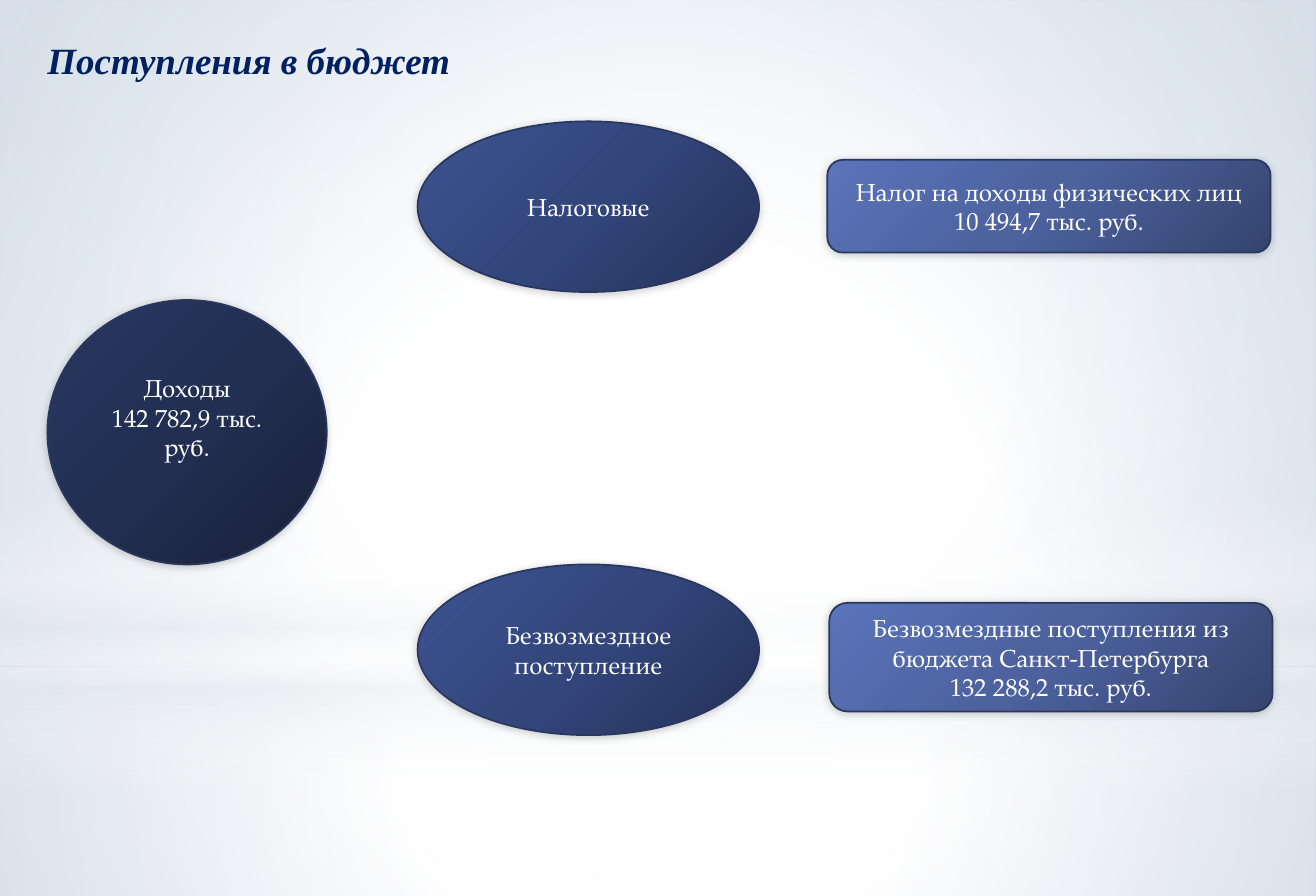
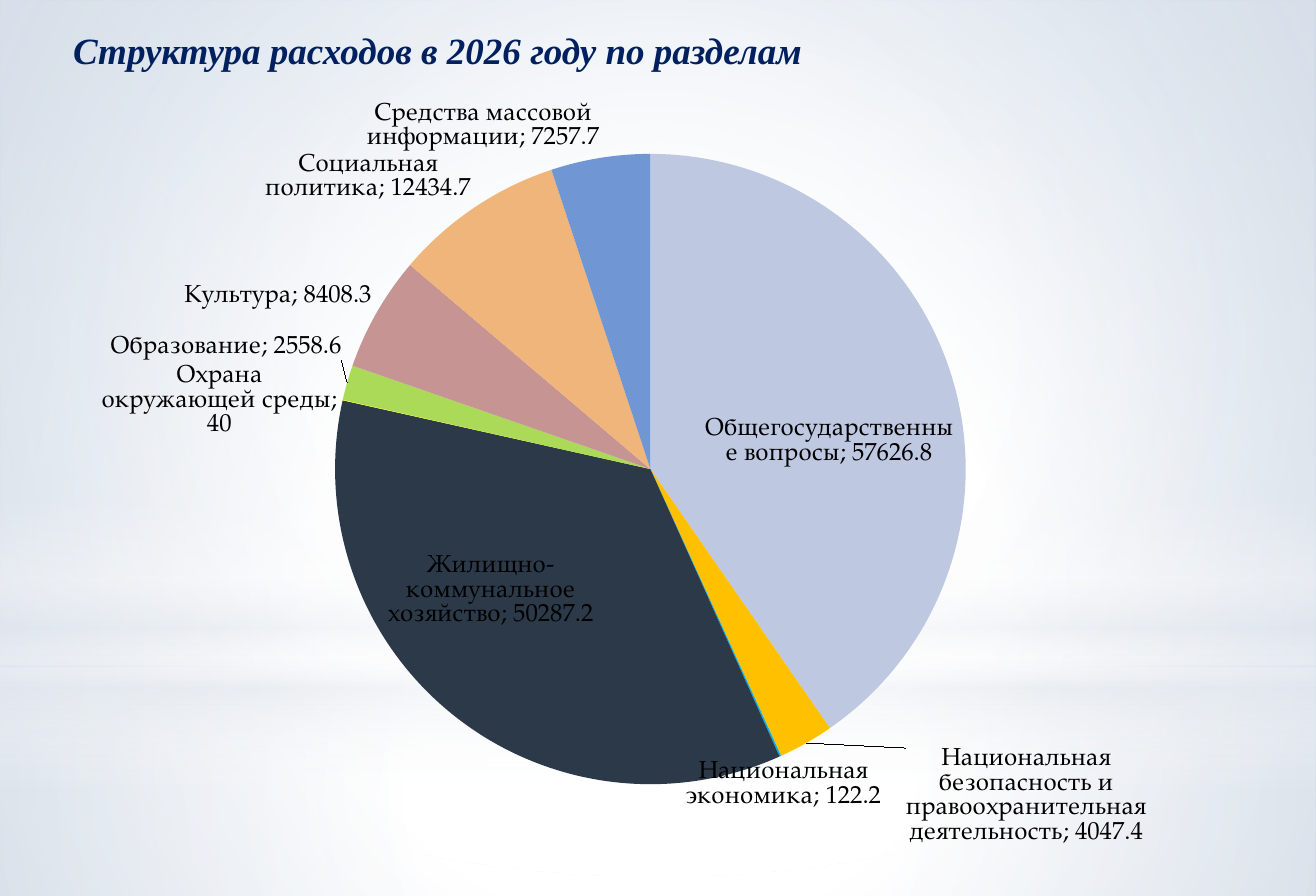
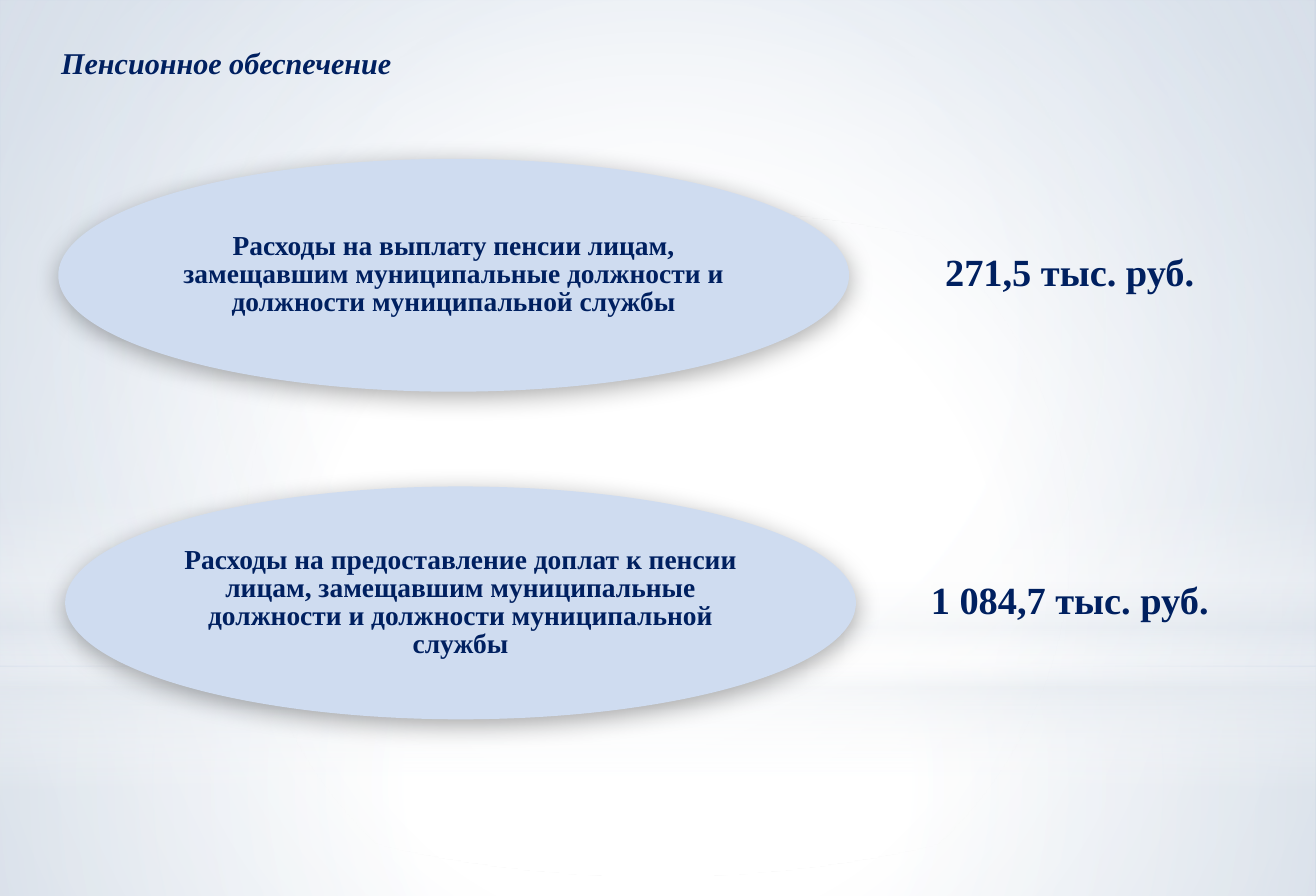
from pptx import Presentation
from pptx.chart.data import CategoryChartData
from pptx.dml.color import RGBColor
from pptx.enum.chart import XL_CHART_TYPE, XL_LABEL_POSITION
from pptx.enum.shapes import MSO_SHAPE
from pptx.enum.text import MSO_ANCHOR, MSO_AUTO_SIZE, PP_ALIGN
from pptx.oxml import parse_xml
from pptx.oxml.ns import nsdecls, qn
from pptx.util import Inches, Pt

NAVY, WHITE, PALE, EDGE = "002060", "FFFFFF", "CFDCF0", "2A375D"
MIST = "E4E9EF"
SERIF, BODY = "Times New Roman", "TeX Gyre Pagella"

CENTRE = (50, 50, 50, 50)
PAGE_GRADIENT = dict(stops=[(0, WHITE), (42, WHITE), (100, "AABDD5")], focus=(24, 44, 24, 12))
BACKDROP = [
    (MSO_SHAPE.RECTANGLE, 6.76, 2.32,
     dict(stops=[(0, WHITE, 91), (37, WHITE, 76), (100, MIST, 79)], focus=CENTRE)),
    (MSO_SHAPE.RECTANGLE, 0, 6.76,
     dict(stops=[(0, WHITE, 89), (48, WHITE, 62), (100, MIST, 79)], focus=CENTRE)),
    (MSO_SHAPE.RECTANGLE, 4.99, 3.03,
     dict(stops=[(0, WHITE, 0), (29, WHITE, 30), (45, MIST, 40),
                 (55, WHITE, 26), (65, MIST, 60), (100, WHITE, 0)], angle=90)),
    (MSO_SHAPE.OVAL, 2.12, 6.76,
     dict(stops=[(0, WHITE), (56, WHITE, 0)], focus=CENTRE)),
]


def diagonal(*colors):
    return dict(stops=list(zip((0, 50, 100), colors)), angle=225)


DARK = diagonal("18213A", "222F52", "293761")
MEDIUM = diagonal("243157", "33467B", "3D5392")
LIGHT = diagonal("35446E", "4C619D", "5A73BA")
# colour, opacity %, blur pt, distance pt, direction in degrees
THIN_SHADOW = ("000000", 20, 6, 1, 135)
SOFT_SHADOW = ("000000", 33, 17.8, 4, 87)


def rgb(color):
    return RGBColor.from_string(color)


def color_xml(color, alpha=100):
    return f'<a:srgbClr val="{color}"><a:alpha val="{alpha * 1000}"/></a:srgbClr>'


def set_gradient(fill, element, stops, angle=None, focus=None):
    """Give the fill of element a linear (angle) or circular (focus) gradient."""
    fill.gradient()
    gs = "".join(f'<a:gs pos="{pos * 1000}">{color_xml(*color)}</a:gs>' for pos, *color in stops)
    if focus:
        sides = " ".join(f'{side}="{v * 1000}"' for side, v in zip("ltrb", focus))
        kind = f'<a:path path="circle"><a:fillToRect {sides}/></a:path>'
    else:
        kind = f'<a:lin ang="{angle * 60000}" scaled="0"/>'
    old = element.find(".//" + qn("a:gradFill"))
    old.getparent().replace(old, parse_xml(
        f'<a:gradFill {nsdecls("a")} rotWithShape="1"><a:gsLst>{gs}</a:gsLst>{kind}</a:gradFill>'))


def set_shadow(sp, color, alpha, blur, dist, angle):
    sp.element.spPr.find(qn("a:effectLst")).append(parse_xml(
        f'<a:outerShdw {nsdecls("a")} blurRad="{Pt(blur)}" dist="{Pt(dist)}" '
        f'dir="{angle * 60000}" rotWithShape="0">{color_xml(color, alpha)}</a:outerShdw>'))


def write(tf, text, size=18, font=BODY, color=WHITE, bold=False, italic=False,
          align=PP_ALIGN.CENTER, spacing=None, after=None, anchor=MSO_ANCHOR.MIDDLE,
          wrap=True, insets=(0.1, 0.05, 0.1, 0.05), auto_size=MSO_AUTO_SIZE.NONE):
    """Fill a text frame, one paragraph per line of text."""
    tf.auto_size, tf.word_wrap, tf.vertical_anchor = auto_size, wrap, anchor
    tf.margin_left, tf.margin_top, tf.margin_right, tf.margin_bottom = map(Inches, insets)
    for i, line in enumerate(text.split("\n")):
        p = tf.add_paragraph() if i else tf.paragraphs[0]
        p.alignment = align
        if spacing:
            p.line_spacing = spacing
        if after:
            p.space_after = Pt(after)
        r = p.add_run()
        r.text = line
        r.font.size, r.font.name, r.font.color.rgb = Pt(size), font, rgb(color)
        r.font.bold, r.font.italic = bold, italic


class Deck:
    PENSION = dict(font=SERIF, color=NAVY, bold=True, spacing=0.85, after=13.3)

    def __init__(self, width, height):
        self.prs = Presentation()
        self.width = width
        self.prs.slide_width, self.prs.slide_height = Inches(width), Inches(height)
        self.slide = None

    def start(self, title, at, size=27, indent=0):
        self.slide = self.prs.slides.add_slide(self.prs.slide_layouts[5])
        sp = self.slide.shapes.title
        sp.left, sp.top, sp.width, sp.height = map(Inches, at)
        write(sp.text_frame, title, size=size, font=SERIF, color=NAVY, bold=True, italic=True,
              align=PP_ALIGN.LEFT, anchor=MSO_ANCHOR.TOP, wrap=False, insets=(indent, 0, 0, 0))

    def backdrop(self):
        """Draw the shared background and move its shapes to the slide master."""
        master = self.prs.slide_master
        set_gradient(master.background.fill, master.element, **PAGE_GRADIENT)
        for i, (kind, top, height, gradient) in enumerate(BACKDROP):
            sp = self.shape(kind, (0, top, self.width, height), gradient)
            sp.element.nvSpPr.cNvPr.set("id", str(100 + i))
            master.element.cSld.spTree.insert(2 + i, sp.element)

    def shape(self, kind, at, fill, text="", line=None, shadow=None, **fmt):
        sp = self.slide.shapes.add_shape(kind, *map(Inches, at))
        sp.shadow.inherit = False
        if isinstance(fill, dict):
            set_gradient(sp.fill, sp.element, **fill)
        else:
            sp.fill.solid()
            sp.fill.fore_color.rgb = rgb(fill)
        if line:
            sp.line.color.rgb, sp.line.width = rgb(line), Pt(1.25)
        else:
            sp.line.fill.background()
        if shadow:
            set_shadow(sp, *shadow)
        if text:
            write(sp.text_frame, text, **fmt)
        return sp

    def node(self, kind, at, fill, text, **fmt):
        self.shape(kind, at, fill, text, line=EDGE, shadow=THIN_SHADOW, **fmt)

    def expense(self, oval_at, text, amount_at, amount):
        self.shape(MSO_SHAPE.FLOWCHART_CONNECTOR, oval_at, PALE, text, shadow=SOFT_SHADOW,
                   size=20, insets=(0, 0, 0, 0), **self.PENSION)
        tb = self.slide.shapes.add_textbox(*map(Inches, amount_at))
        write(tb.text_frame, amount, size=28, anchor=MSO_ANCHOR.TOP, wrap=False,
              auto_size=MSO_AUTO_SIZE.SHAPE_TO_FIT_TEXT, **self.PENSION)

    def pie(self, at, rows, layout):
        """Draw a pie from (category, value, colour) rows; layout is x, y, w, h of the plot."""
        data = CategoryChartData()
        data.categories = [name for name, _, _ in rows]
        data.add_series("Series 1", [value for _, value, _ in rows])
        chart = self.slide.shapes.add_chart(XL_CHART_TYPE.PIE, *map(Inches, at), data).chart
        chart.has_title = chart.has_legend = False
        chart.font.size, chart.font.name = Pt(18), BODY
        chart.font.color.rgb = rgb("000000")
        plot = chart.plots[0]
        plot.vary_by_categories = True
        series = plot.series[0]
        for i, (_, _, color) in enumerate(rows):
            fmt = series.points[i].format
            fmt.fill.solid()
            fmt.fill.fore_color.rgb = rgb(color)
            fmt.line.fill.background()
        labels = series.data_labels
        labels.show_value = labels.show_category_name = True
        labels.position = XL_LABEL_POSITION.BEST_FIT
        root = chart.element
        root.find(".//" + qn("c:ser")).find(".//" + qn("c:showBubbleSize")).addnext(
            parse_xml(f'<c:separator {nsdecls("c")}>; </c:separator>'))
        area = root.find(".//" + qn("c:plotArea"))
        for old in area.findall(qn("c:layout")):
            area.remove(old)
        sizes = "".join(f'<c:{tag} val="{v}"/>' for tag, v in zip("xywh", layout))
        area.insert(0, parse_xml(
            f'<c:layout {nsdecls("c")}><c:manualLayout><c:layoutTarget val="inner"/>'
            f'<c:xMode val="edge"/><c:yMode val="edge"/>{sizes}</c:manualLayout></c:layout>'))


def income_slide(deck):
    deck.start("Поступления в бюджет", (0.48, 0.38, 4.11, 0.42))
    deck.backdrop()
    deck.node(MSO_SHAPE.OVAL, (0.48, 3.04, 2.83, 2.68), DARK,
              "Доходы\n142 782,9 тыс. руб.", insets=(0.1, 0.05, 0.1, 0.35))
    for top, text in ((1.23, "Налоговые"), (5.72, "Безвозмездное поступление")):
        deck.node(MSO_SHAPE.OVAL, (4.23, top, 3.46, 1.73), MEDIUM, text)
    deck.node(MSO_SHAPE.ROUNDED_RECTANGLE, (8.38, 1.62, 4.49, 0.94), LIGHT,
              "Налог на доходы физических лиц\n10 494,7 тыс. руб.")
    deck.node(MSO_SHAPE.ROUNDED_RECTANGLE, (8.4, 6.11, 4.49, 1.1), LIGHT,
              "Безвозмездные поступления из\nбюджета Санкт-Петербурга\n132 288,2 тыс. руб.",
              anchor=MSO_ANCHOR.TOP)


def spending_slide(deck):
    deck.start("Структура расходов в 2026 году по разделам", (0.5, 0.28, 8.19, 0.44), indent=0.24)
    deck.pie((0.43, 0.92, 12.53, 7.8), [
        ("Общегосударственные вопросы", 57626.8, "BFC8E1"),
        ("Национальная безопасность и правоохранительная деятельность", 4047.4, "FFC000"),
        ("Национальная экономика", 122.2, "00B0F0"),
        ("Жилищно-коммунальное хозяйство", 50287.2, "2B3949"),
        ("Охрана окружающей среды", 40, "FFFF00"),
        ("Образование", 2558.6, "ABD958"),
        ("Культура", 8408.3, "C79494"),
        ("Социальная политика", 12434.7, "F0B57A"),
        ("Средства массовой информации", 7257.7, "7097D3"),
    ], layout=(0.075, 0.082, 0.833, 0.819))


def pension_slide(deck):
    deck.start("Пенсионное обеспечение", (0.62, 0.45, 3.39, 0.29), size=22)
    deck.expense((0.59, 1.61, 8.01, 2.36),
                 "Расходы на выплату пенсии лицам, замещавшим муниципальные должности "
                 "и должности муниципальной службы",
                 (9.46, 2.54, 2.75, 0.5), "271,5 тыс. руб.")
    deck.expense((0.66, 4.93, 8.01, 2.36),
                 "Расходы на предоставление доплат к пенсии лицам, замещавшим "
                 "муниципальные должности и должности муниципальной службы",
                 (9.31, 5.86, 3.05, 0.5), "1 084,7 тыс. руб.")


def main():
    deck = Deck(13.33, 9.08)
    for build in (income_slide, spending_slide, pension_slide):
        build(deck)
    deck.prs.save("out.pptx")


if __name__ == "__main__":
    main()
